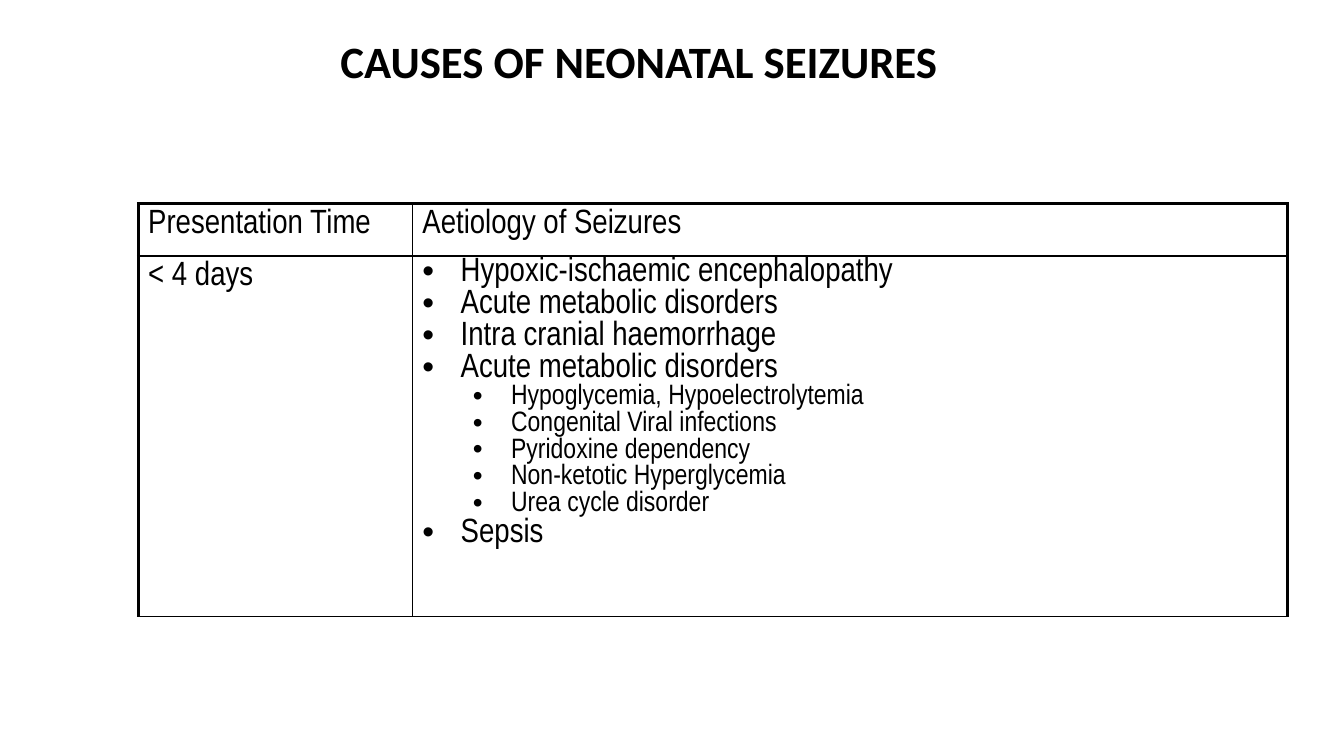
from dataclasses import dataclass

from lxml.etree import SubElement
from pptx import Presentation
from pptx.dml.color import RGBColor
from pptx.enum.text import MSO_ANCHOR, PP_ALIGN
from pptx.oxml.ns import qn
from pptx.util import Inches, Pt

TITLE = "CAUSES OF NEONATAL SEIZURES"
HEADINGS = ["Presentation Time", "Aetiology of Seizures"]
ONSET = "< 4 days"
CAUSES = [  # (level, cause)
    (0, "Hypoxic-ischaemic encephalopathy"),
    (0, "Acute metabolic disorders"),
    (0, "Intra cranial haemorrhage"),
    (0, "Acute metabolic disorders"),
    (1, "Hypoglycemia, Hypoelectrolytemia"),
    (1, "Congenital Viral infections"),
    (1, "Pyridoxine dependency"),
    (1, "Non-ketotic Hyperglycemia"),
    (1, "Urea cycle disorder"),
    (0, "Sepsis"),
]
ROWS = [
    [[(None, heading)] for heading in HEADINGS],
    [[(None, ONSET)], CAUSES],
]

SLIDE_SIZE = (13.33, 7.5)
TITLE_BOX = (0.36, 0.29, 11.96, 0.68)
TABLE_CORNER = (1.37, 2.02)
COLUMN_WIDTHS = [2.72, 8.68]
ROW_HEIGHTS = [0.52, 3.37]
HANGING = 0.38
LEVEL_STEP = 0.5
SPACE_SHARE = 0.2


@dataclass(frozen=True)
class Theme:
    ink: str = "000000"
    title_font: str = "Calibri"
    body_font: str = "Arial Narrow"
    title_size: int = 32
    level_sizes: tuple = (24, 20)
    thick: float = 2.25
    thin: float = 1


THEME = Theme()


def add_span(para, text, font, size, bold=False):
    span = para.add_run()
    span.text = text
    span.font.name = font
    span.font.size = Pt(size)
    span.font.bold = bold
    span.font.color.rgb = RGBColor.from_string(THEME.ink)


def set_bullet(para, level):
    para.level = level
    para.line_spacing = 0.8
    properties = para._p.get_or_add_pPr()
    properties.set("marL", str(Inches(HANGING + level * LEVEL_STEP)))
    properties.set("indent", str(-Inches(HANGING)))
    SubElement(properties, qn("a:buFont"), typeface="Arial")
    SubElement(properties, qn("a:buChar"), char="•")


def set_borders(cell, widths):
    """Draw the left, right, top and bottom borders, in that order."""
    properties = cell._tc.get_or_add_tcPr()
    for side, width in zip("LRTB", widths):
        line = SubElement(properties, qn(f"a:ln{side}"), w=str(Pt(width)))
        fill = SubElement(line, qn("a:solidFill"))
        SubElement(fill, qn("a:srgbClr"), val=THEME.ink)


def fill_cell(cell, lines):
    frame = cell.text_frame
    for index, (level, text) in enumerate(lines):
        size = THEME.level_sizes[level or 0]
        para = frame.paragraphs[0] if index == 0 else frame.add_paragraph()
        if level is not None:
            set_bullet(para, level)
        if index > 0:
            para.space_before = Pt(size * SPACE_SHARE)
        add_span(para, text, THEME.body_font, size)


def add_title(page):
    box = page.shapes.add_textbox(*map(Inches, TITLE_BOX))
    frame = box.text_frame
    frame.word_wrap = True
    frame.vertical_anchor = MSO_ANCHOR.MIDDLE
    para = frame.paragraphs[0]
    para.alignment = PP_ALIGN.CENTER
    para.line_spacing = 0.9
    add_span(para, TITLE, THEME.title_font, THEME.title_size, bold=True)


def add_causes_table(page):
    extent = (sum(COLUMN_WIDTHS), sum(ROW_HEIGHTS))
    table = page.shapes.add_table(
        len(ROWS), len(HEADINGS), *map(Inches, TABLE_CORNER + extent)
    ).table
    table.first_row = table.horz_banding = False
    for column, width in zip(table.columns, COLUMN_WIDTHS):
        column.width = Inches(width)
    for row, height in zip(table.rows, ROW_HEIGHTS):
        row.height = Inches(height)
    last_column = len(HEADINGS) - 1
    for row_index, row in enumerate(ROWS):
        for column_index, lines in enumerate(row):
            cell = table.cell(row_index, column_index)
            outer = (column_index == 0, column_index == last_column,
                     row_index == 0, False)
            set_borders(cell, [THEME.thick if edge else THEME.thin for edge in outer])
            cell.fill.background()
            fill_cell(cell, lines)


def main():
    deck = Presentation()
    deck.slide_width, deck.slide_height = map(Inches, SLIDE_SIZE)
    page = deck.slides.add_slide(deck.slide_layouts[6])
    add_title(page)
    add_causes_table(page)
    deck.save("out.pptx")


if __name__ == "__main__":
    main()
